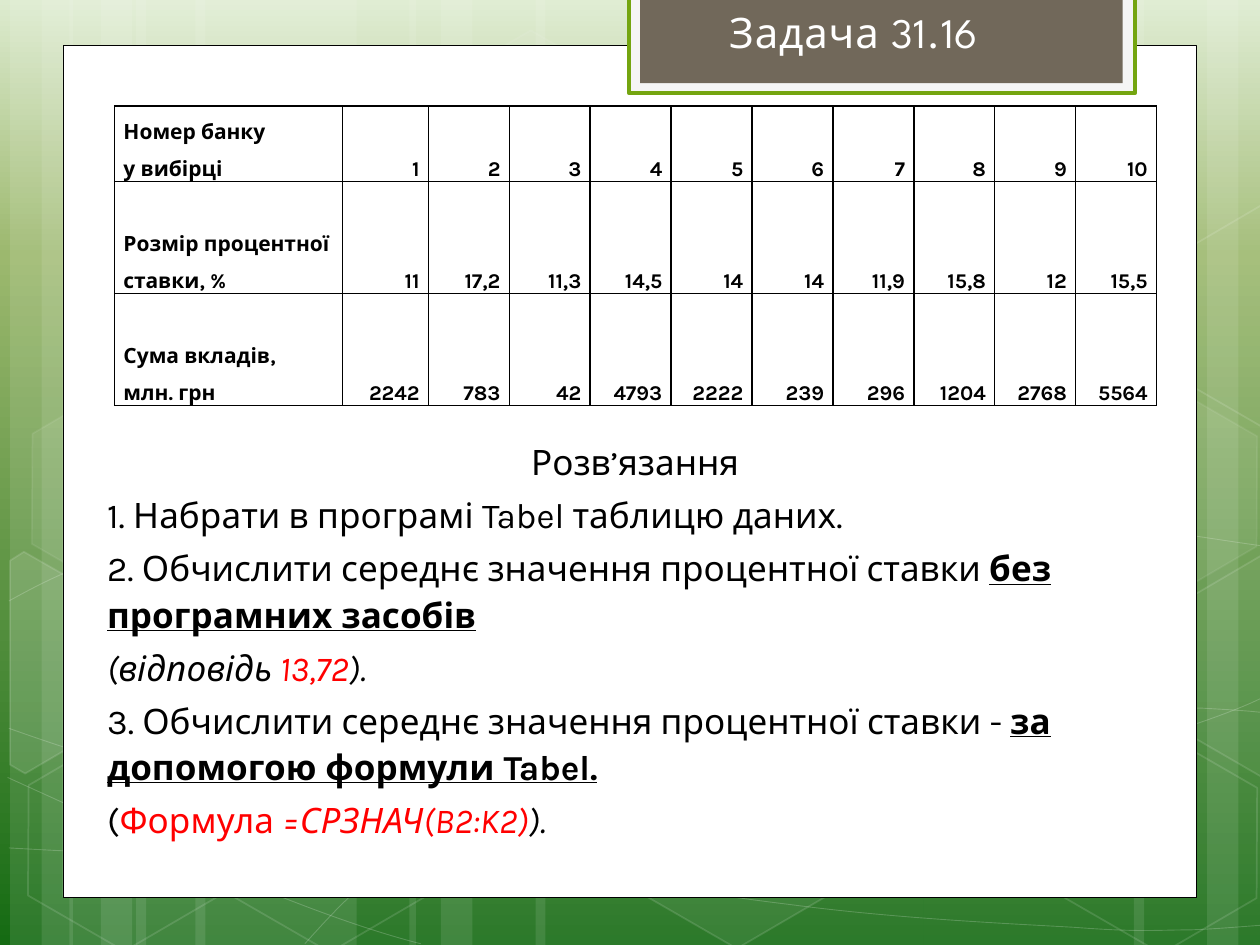
import copy

import pptx
import pptx.dml.color
import pptx.enum.shapes
import pptx.enum.text
import pptx.oxml
import pptx.oxml.ns
import pptx.util

WIDTH, HEIGHT = 10, 7.5
WHITE, BLACK, RED = "FFFFFF", "000000", "FF0000"
SKY = [(0, "DDEBCF"), (0.27, "9CB86E"), (1, "156B13")]
STRIPES = [
    (1.08, 1.75), (0.08, 0.5), (0.33, 0.83), (1.55, 1.75), (0.55, 0.5), (0.8, 0.83),
    (7.33, 1.75), (9.58, 0.5), (9, 0.83), (4.25, 3.08), (3.25, 0.5), (3.5, 0.83),
]
CURVES = [
    [(0.07, 6.73), (0.61, 6.76), (1.15, 6.79), (1.9, 6.78), (2.65, 6.77), (3.58, 6.75),
     (4.58, 6.65), (5.58, 6.55), (7, 6.36), (7.92, 6.17), (8.83, 5.98), (9.77, 5.68),
     (10.07, 5.51)],
    [(0.07, 4.77), (0.36, 4.61), (0.65, 4.46), (1.21, 4.31), (1.78, 4.16), (2.59, 3.94),
     (3.47, 3.87), (4.36, 3.8), (5.44, 3.79), (6.54, 3.87), (7.64, 3.95), (9.47, 4.26),
     (10.07, 4.34)],
    [(0.06, 6.17), (1.27, 6.72), (2.47, 7.27), (3.34, 7.49)],
    [(0.07, 5.78), (0.38, 5.89), (0.7, 6), (1.28, 6.16), (1.86, 6.31), (2.73, 6.56),
     (3.57, 6.73), (4.4, 6.9), (5.45, 7.08), (6.28, 7.18), (7.11, 7.29), (8, 7.33),
     (8.53, 7.36), (9.05, 7.4), (9.19, 7.38), (9.45, 7.38), (9.71, 7.37), (9.89, 7.35),
     (10.07, 7.34)],
    [(2.42, 7.49), (2.6, 7.29), (2.78, 7.09), (3.02, 6.91), (3.26, 6.73), (3.6, 6.53),
     (3.88, 6.39), (4.16, 6.25), (4.33, 6.19), (4.7, 6.09), (5.06, 5.99), (5.73, 5.85),
     (6.08, 5.78), (6.44, 5.71), (6.49, 5.71), (6.8, 5.69), (7.11, 5.66), (7.6, 5.63),
     (7.94, 5.62), (8.29, 5.61), (8.86, 5.62), (8.86, 5.62), (9.08, 5.62), (9.3, 5.62),
     (9.53, 5.62), (9.71, 5.63), (9.88, 5.64), (9.97, 5.65), (10.06, 5.66), (10.03, 5.65),
     (10.06, 5.66)],
]
HEXAGONS = [
    (3.34, 0.36, 4, 8), (4.97, 5.89, 6, 12), (0.11, 5.91, 0, 12), (0.14, 3.12, 7, 8),
    (1.74, 5.92, 0, 12), (7.53, 4.53, 10, 12), (8.34, 5.93, 0, 12), (8.34, 3.14, 7, 8),
]
CUT_HEXAGONS = [
    ([(0.08, 4.45), (0.19, 4.38), (0.96, 4.82), (0.95, 5.7), (0.2, 6.14), (0.08, 6.07)], 10),
    ([(9.26, 4.85), (10.01, 4.41), (10.09, 4.46), (10.09, 6.13), (10.02, 6.17), (9.26, 5.73)], 4),
    ([(9.26, 2.07), (10.01, 1.63), (10.1, 1.68), (10.09, 3.35), (10.02, 3.39), (9.26, 2.95)], 0),
]
TITLE = "Задача 31.16"
BANKS = [
    ("Номер банку\nу вибірці", "1 2 3 4 5 6 7 8 9 10"),
    ("Розмір процентної ставки, %", "11 17,2 11,3 14,5 14 14 11,9 15,8 12 15,5"),
    ("Сума вкладів,\nмлн. грн", "2242 783 42 4793 2222 239 296 1204 2768 5564"),
]
TABLE_WIDTH = 8.27
LEADING = [1.81, 0.68]
COLUMNS = LEADING + [(TABLE_WIDTH - sum(LEADING)) / 9] * 9
ROWS = [0.6, 0.89, 0.89]
SOLUTION = [
    [("Розв’язання", "")],
    [("1. Набрати в програмі Tabel таблицю даних.", "")],
    [("2. Обчислити середнє значення процентної ставки ", ""), ("без програмних засобів", "strong")],
    [("(відповідь ", "italic"), ("13,72", "italic red"), (").", "italic")],
    [("3. Обчислити середнє значення процентної ставки - ", ""),
     ("за допомогою формули Tabel.", "strong")],
    [("(", ""), ("Формула ", "red"), ("=СРЗНАЧ(B2:K2)", "italic red"), (").", "italic")],
]

SHAPE = pptx.enum.shapes.MSO_SHAPE
ALIGN = pptx.enum.text.PP_ALIGN
ANCHOR = pptx.enum.text.MSO_ANCHOR
inch = pptx.util.Inches


def paint(fill, colour, opacity=100):
    if not opacity:
        fill.background()
        return
    fill.solid()
    fill.fore_color.rgb = pptx.dml.color.RGBColor.from_string(colour)
    if opacity < 100:
        tint = fill.fore_color._xFill[0]
        tint.append(pptx.oxml.parse_xml(
            f'<a:alpha {pptx.oxml.ns.nsdecls("a")} val="{opacity * 1000}"/>'))


def finish(shape, fill, line=None, width=1, opacity=100, line_opacity=100):
    shape.shadow.inherit = False
    paint(shape.fill, fill, opacity)
    paint(shape.line.fill, line, line_opacity if line else 0)
    if line:
        shape.line.width = pptx.util.Pt(width)
    return shape


def add_preset(page, kind, *place):
    return page.shapes.add_shape(kind, *map(inch, place))


def add_outline(page, points, close):
    corners = [(inch(x), inch(y)) for x, y in points]
    builder = page.shapes.build_freeform(*corners[0])
    builder.add_line_segments(corners[1:], close=close)
    return builder.convert_to_shape()


def add_curve(page, knots):
    curve = add_outline(page, knots, False)
    segments = list(curve._element.iter(pptx.oxml.ns.qn("a:lnTo")))
    for start in range(0, len(segments), 3):
        bend = pptx.oxml.parse_xml(f'<a:cubicBezTo {pptx.oxml.ns.nsdecls("a")}/>')
        segments[start].addprevious(bend)
        for segment in segments[start:start + 3]:
            bend.append(segment[0])
            segment.getparent().remove(segment)
    return curve


def style(font, size, name, colour):
    font.size, font.name = pptx.util.Pt(size), name
    paint(font.fill, colour)


def place_text(page, box, *place):
    box.left, box.top, box.width, box.height = map(inch, place)
    page.shapes._spTree.append(box._element)
    frame = box.text_frame
    frame.word_wrap = True
    frame.auto_size = pptx.enum.text.MSO_AUTO_SIZE.NONE
    frame.vertical_anchor = ANCHOR.TOP
    return frame


def draw_backdrop(page):
    fill = page.background.fill
    fill.gradient()
    fill.gradient_angle = 270
    stop_list = fill.gradient_stops[0]._gs.getparent()
    stop_list.append(copy.deepcopy(stop_list[-1]))
    for stop, (position, colour) in zip(fill.gradient_stops, SKY):
        stop.position = position
        stop.color.rgb = pptx.dml.color.RGBColor.from_string(colour)
    for left, width in STRIPES:
        finish(add_preset(page, SHAPE.RECTANGLE, left, 0, width, HEIGHT), WHITE, opacity=10)
    for knots in CURVES:
        finish(add_curve(page, knots), WHITE, WHITE, 0.5, 0, 20)
    for left, top, opacity, line_opacity in HEXAGONS:
        hexagon = add_preset(page, SHAPE.HEXAGON, left, top, 1.75, 1.52)
        hexagon.adjustments[0] = 0.285
        hexagon.rotation = 30
        finish(hexagon, WHITE, WHITE, 1, opacity, line_opacity)
    for points, opacity in CUT_HEXAGONS:
        finish(add_outline(page, points, True), WHITE, WHITE, 1, opacity, 12)
    finish(add_preset(page, SHAPE.RECTANGLE, 0.5, 0.36, 9, 6.76), WHITE, BLACK, 0.5)
    finish(add_preset(page, SHAPE.RECTANGLE, 4.99, -0.02, 4.02, 0.76), "F5F5F5", "74A510", 2)
    finish(add_preset(page, SHAPE.RECTANGLE, 5.08, -0.02, 3.83, 0.68), "71685A")


def write_title(page):
    frame = place_text(page, page.shapes.title, 5.16, 0, 3.23, 0.5)
    para = frame.paragraphs[0]
    para.alignment = ALIGN.CENTER
    span = para.add_run()
    span.text = TITLE
    style(span.font, 24, "League Spartan", WHITE)
    span.font._element.set("spc", "50")


def add_borders(cell):
    properties = cell._tc.get_or_add_tcPr()
    for position, side in enumerate(("lnL", "lnR", "lnT", "lnB")):
        properties.insert(position, pptx.oxml.parse_xml(
            f'<a:{side} {pptx.oxml.ns.nsdecls("a")} w="12700"><a:solidFill>'
            f'<a:srgbClr val="{BLACK}"/></a:solidFill></a:{side}>'))


def add_bank_table(page):
    place = map(inch, (0.91, 0.84, TABLE_WIDTH, sum(ROWS)))
    table = page.shapes.add_table(len(ROWS), len(COLUMNS), *place).table
    for column, width in zip(table.columns, COLUMNS):
        column.width = inch(width)
    for row, height, (label, values) in zip(table.rows, ROWS, BANKS):
        row.height = inch(height)
        for index, (cell, text) in enumerate(zip(row.cells, [label] + values.split())):
            cell.text = text
            cell.vertical_anchor = ANCHOR.BOTTOM
            cell.margin_left = cell.margin_right = inch(0.07)
            cell.margin_top = cell.margin_bottom = 0
            cell.fill.background()
            add_borders(cell)
            for para in cell.text_frame.paragraphs:
                para.line_spacing = 1.5
                para.alignment = ALIGN.RIGHT if index else ALIGN.LEFT
                style(para.font, 12, "Karla", BLACK)
                para.font.bold = True


def write_solution(page):
    frame = place_text(page, page.placeholders[1], 0.75, 3.28, 8.58, 4.41)
    for index, spans in enumerate(SOLUTION):
        para = frame.paragraphs[0] if index == 0 else frame.add_paragraph()
        para.alignment = ALIGN.LEFT if index else ALIGN.CENTER
        para.line_spacing = 1.1 if index else 1.5
        properties = para._p.get_or_add_pPr()
        properties.set("marL", "0")
        properties.set("indent", "0")
        properties.append(pptx.oxml.parse_xml(f'<a:buNone {pptx.oxml.ns.nsdecls("a")}/>'))
        for text, look in spans:
            span = para.add_run()
            span.text = text
            style(span.font, 20, "Karla", RED if "red" in look else BLACK)
            span.font.italic = "italic" in look
            span.font.bold = span.font.underline = "strong" in look


def main():
    deck = pptx.Presentation()
    deck.slide_width, deck.slide_height = inch(WIDTH), inch(HEIGHT)
    page = deck.slides.add_slide(deck.slide_layouts[1])
    draw_backdrop(page)
    write_title(page)
    add_bank_table(page)
    write_solution(page)
    deck.save("out.pptx")


if __name__ == "__main__":
    main()
